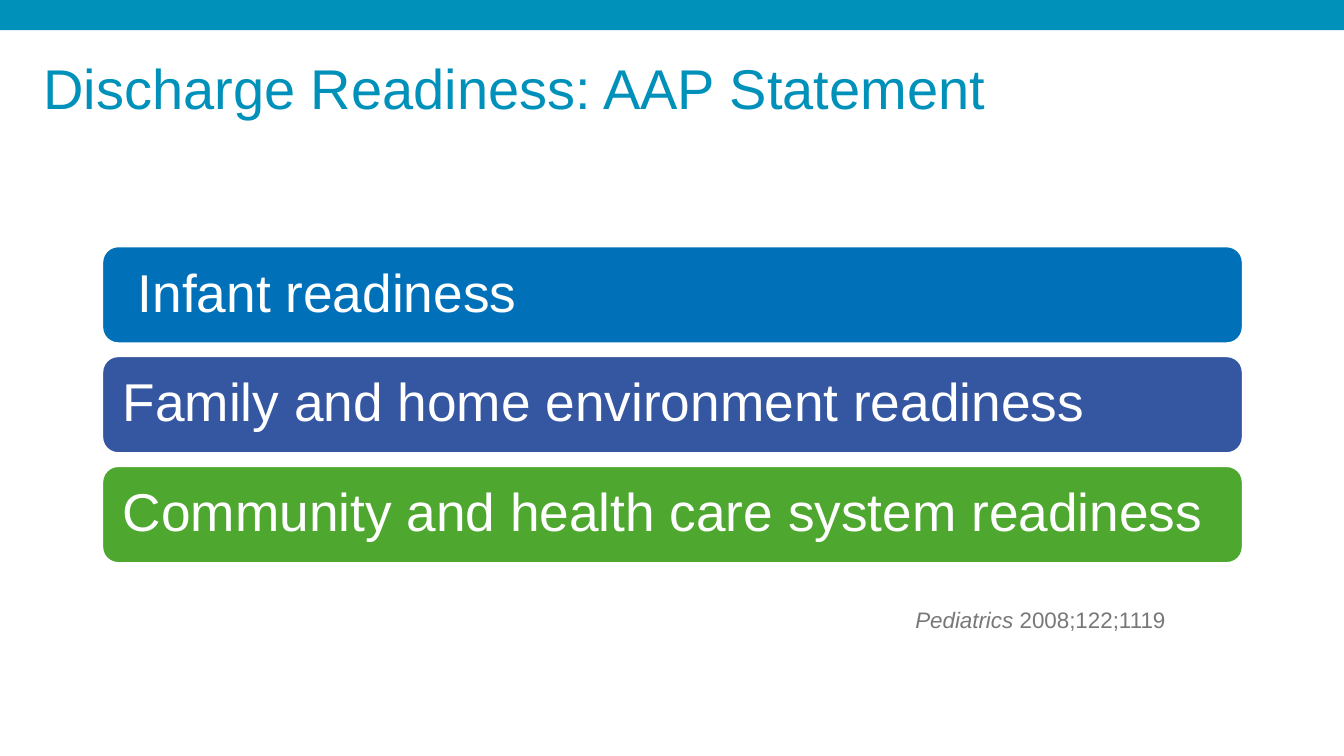
from pptx import Presentation
from pptx.dml.color import RGBColor
from pptx.enum.shapes import MSO_SHAPE
from pptx.enum.text import MSO_ANCHOR, PP_ALIGN
from pptx.util import Inches, Pt

COLORS = {
    "teal": "0091BA",
    "blue": "0071B9",
    "indigo": "3556A1",
    "green": "4EA72E",
    "white": "FFFFFF",
    "gray": "78787B",
}
BAR_LEFT, BAR_TOP, BAR_WIDTH, BAR_HEIGHT = 1.01, 2.44, 11.32, 0.97
BAR_PITCH = 1.09
BAR_INSET = 0.16


def add_filled_shape(kind, left, top, width, height, color):
    shape = slide.shapes.add_shape(
        kind, Inches(left), Inches(top), Inches(width), Inches(height))
    shape.shadow.inherit = False
    shape.fill.solid()
    shape.fill.fore_color.rgb = RGBColor.from_string(COLORS[color])
    shape.line.fill.background()
    return shape


def format_text(para, size, color):
    para.alignment = PP_ALIGN.LEFT
    for span in para.runs:
        span.font.name = "Arial"
        span.font.size = Pt(size)
        span.font.color.rgb = RGBColor.from_string(COLORS[color])


deck = Presentation()
deck.slide_width = Inches(13.33)
deck.slide_height = Inches(7.5)
slide = deck.slides.add_slide(deck.slide_layouts[5])

add_filled_shape(MSO_SHAPE.RECTANGLE, 0, 0, 13.33, 0.3, "teal")

title = slide.shapes.title
title.left, title.top = Inches(0.33), Inches(0.41)
title.width, title.height = Inches(12.68), Inches(0.95)
title.text_frame.text = "Discharge Readiness: AAP Statement"
title.text_frame.vertical_anchor = MSO_ANCHOR.MIDDLE
title.text_frame.margin_bottom = Inches(0.1)
format_text(title.text_frame.paragraphs[0], 40, "teal")

# Label, fill colour and extra left indent of each bar
readiness_bars = [
    ("Infant readiness", "blue", 0.15),
    ("Family and home environment readiness", "indigo", 0),
    ("Community and health care system readiness", "green", 0),
]
for row, (label, color, indent) in enumerate(readiness_bars):
    bar = add_filled_shape(
        MSO_SHAPE.ROUNDED_RECTANGLE, BAR_LEFT, BAR_TOP + row * BAR_PITCH,
        BAR_WIDTH, BAR_HEIGHT, color)
    bar.line.color.rgb = RGBColor.from_string(COLORS["white"])
    bar.line.width = Pt(2)
    frame = bar.text_frame
    frame.text = label
    frame.word_wrap = True
    frame.vertical_anchor = MSO_ANCHOR.MIDDLE
    frame.margin_left = Inches(BAR_INSET + indent)
    frame.margin_right = frame.margin_top = frame.margin_bottom = Inches(BAR_INSET)
    frame.paragraphs[0].line_spacing = 0.9
    format_text(frame.paragraphs[0], 38, "white")

citation = slide.shapes.add_textbox(
    Inches(8.98), Inches(5.96), Inches(3.34), Inches(0.37))
citation.text_frame.word_wrap = True
para = citation.text_frame.paragraphs[0]
for text, italic in [("Pediatrics ", True), ("2008;122;1119", False)]:
    span = para.add_run()
    span.text = text
    span.font.italic = italic
format_text(para, 16, "gray")

deck.save("out.pptx")
